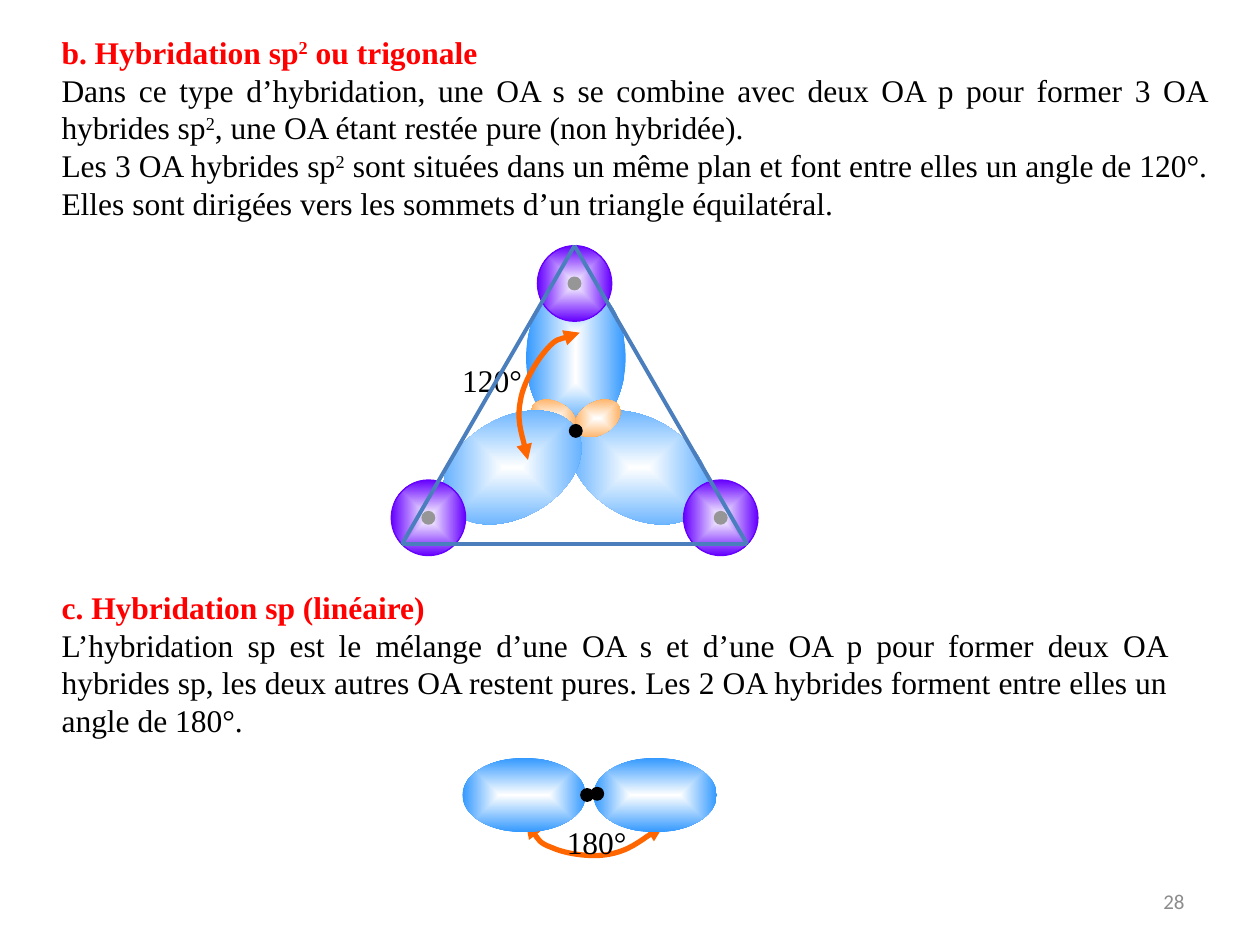
from math import cos, radians, sin

from pptx import Presentation
from pptx.dml.color import RGBColor
from pptx.enum.shapes import MSO_CONNECTOR, MSO_SHAPE
from pptx.enum.text import MSO_ANCHOR, PP_ALIGN
from pptx.oxml import parse_xml
from pptx.oxml.ns import nsdecls, qn
from pptx.util import Inches, Pt

BLACK = RGBColor(0x00, 0x00, 0x00)
WHITE = RGBColor(0xFF, 0xFF, 0xFF)
RED = RGBColor(0xFF, 0x00, 0x00)
GREY = RGBColor(0x96, 0x96, 0x96)
PAGE_GREY = RGBColor(0x8C, 0x8C, 0x8C)
LOBE_BLUE = RGBColor(0x33, 0x99, 0xFF)
TAIL_ORANGE = RGBColor(0xFF, 0x99, 0x33)
ATOM_VIOLET = RGBColor(0x66, 0x00, 0xFF)
ARC_ORANGE = RGBColor(0xFF, 0x66, 0x00)
TRIANGLE_BLUE = RGBColor(0x4B, 0x7E, 0xBC)
SERIF = "Times New Roman"

# Content: each paragraph is a tuple of spans, every second span is raised
TRIGONAL_TEXT = [
    ("b. Hybridation sp", "2", " ou trigonale"),
    ("Dans ce type d’hybridation, une OA s se combine avec deux OA p pour "
     "former 3 OA hybrides sp", "2", ", une OA étant restée pure (non hybridée)."),
    ("Les 3 OA hybrides sp", "2", " sont situées dans un même plan et font entre "
     "elles un angle de 120°. Elles sont dirigées vers les sommets d’un triangle "
     "équilatéral."),
]
LINEAR_TEXT = [
    ("c. Hybridation sp (linéaire)",),
    ("L’hybridation sp est le mélange d’une OA s et d’une OA p pour former deux "
     "OA hybrides sp, les deux autres OA restent pures. Les 2 OA hybrides forment "
     "entre elles un angle de 180°.",),
]

# Geometry in inches
NUCLEUS = (4.57, 3.42)
LOBE_ANGLES = (90, 210, 330)
LOBE_DISTANCE, TAIL_DISTANCE = 0.58, 0.2
LOBE_SIZE, TAIL_SIZE, DOT_SIZE = (1.18, 0.79), (0.39, 0.26), (0.1, 0.1)
ATOM_SIZE, LINEAR_LOBE_SIZE = (0.59, 0.6), (0.98, 0.59)
ATOM_CENTRES = [(3.4, 4.11), (5.72, 4.11), (4.56, 2.25)]
TRIANGLE = [(4.56, 1.95), (3.19, 4.32), (5.93, 4.32)]
LINEAR_PAIRS = [((4.16, 6.31), (4.66, 6.31)), ((5.2, 6.31), (4.74, 6.3))]
ARC_120 = [(4.6, 2.63), (4.56, 2.65), (4.42, 2.67), (4.34, 2.76), (4.26, 2.85),
           (4.15, 3.03), (4.13, 3.17), (4.1, 3.32), (4.17, 3.55), (4.19, 3.64)]
ARC_180 = [(4.17, 6.53), (4.2, 6.57), (4.27, 6.69), (4.38, 6.73), (4.49, 6.78),
           (4.7, 6.81), (4.84, 6.78), (4.99, 6.75), (5.17, 6.61), (5.26, 6.56)]

deck = Presentation()
deck.slide_width, deck.slide_height = Inches(10), Inches(7.5)
page = deck.slides.add_slide(deck.slide_layouts[6])


def add_text(place, paragraphs, heading=False, size=18, name=SERIF, color=BLACK,
             align=PP_ALIGN.LEFT, anchor=MSO_ANCHOR.TOP):
    box = page.shapes.add_textbox(*map(Inches, place))
    frame = box.text_frame
    frame.word_wrap = True
    frame.vertical_anchor = anchor
    for index, spans in enumerate(paragraphs):
        para = frame.add_paragraph() if index else frame.paragraphs[0]
        is_heading = heading and index == 0
        para.alignment = align
        para.font.name, para.font.size = name, Pt(size)
        para.font.bold = is_heading
        para.font.color.rgb = RED if is_heading else color
        for position, text in enumerate(spans):
            span = para.add_run()
            span.text = text
            if position % 2:
                span.font._element.set("baseline", "30000")


def add_ellipse(centre, size, color, glow=False, outline=False, rotation=0):
    left, top = (middle - length / 2 for middle, length in zip(centre, size))
    shape = page.shapes.add_shape(MSO_SHAPE.OVAL, *map(Inches, (left, top, *size)))
    shape.rotation = rotation
    shape.shadow.inherit = False
    if glow:
        # White centre fading out to the colour
        shape.fill.gradient()
        for stop, stop_color in zip(shape.fill.gradient_stops, (WHITE, color)):
            stop.color.rgb = stop_color
        gradient = shape._element.spPr.find(qn("a:gradFill"))
        gradient.replace(gradient.find(qn("a:lin")), parse_xml(
            f'<a:path {nsdecls("a")} path="shape"><a:fillToRect l="50000" '
            't="50000" r="50000" b="50000"/></a:path>'))
    else:
        shape.fill.solid()
        shape.fill.fore_color.rgb = color
    if outline:
        shape.line.color.rgb = color
        shape.line.width = Pt(0.75)
    else:
        shape.line.fill.background()


def turn(point, pivot, angle):
    cosine, sine = cos(radians(angle)), sin(radians(angle))
    across, down = point[0] - pivot[0], point[1] - pivot[1]
    return (pivot[0] + across * cosine - down * sine,
            pivot[1] + across * sine + down * cosine)


def add_arc(points, pivot, rotation):
    # The outline is laid out unturned, then the shape is rotated
    start, *rest = [tuple(map(Inches, turn(point, pivot, -rotation)))
                    for point in points]
    builder = page.shapes.build_freeform(*start)
    builder.add_line_segments(rest, close=False)
    arc = builder.convert_to_shape()
    arc.rotation = rotation
    arc.shadow.inherit = False
    arc.fill.background()
    arc.line.color.rgb = ARC_ORANGE
    arc.line.width = Pt(3)
    for end in ("headEnd", "tailEnd"):
        arc.line._get_or_add_ln().append(
            parse_xml(f'<a:{end} {nsdecls("a")} type="triangle"/>'))
    # Turn each three straight segments into one Bézier curve
    outline = next(arc._element.iter(qn("a:path")))
    segments = outline.findall(qn("a:lnTo"))
    for first in range(0, len(segments), 3):
        curve = parse_xml(f'<a:cubicBezTo {nsdecls("a")}/>')
        outline.append(curve)
        for segment in segments[first:first + 3]:
            curve.append(segment[0])
            outline.remove(segment)


def along_axis(angle, distance):
    return turn((NUCLEUS[0] + distance, NUCLEUS[1]), NUCLEUS, angle)


# Page number and trigonal text
add_text((7.17, 6.95, 2.33, 0.4), [("28",)], size=12, name="Calibri",
         color=PAGE_GREY, align=PP_ALIGN.RIGHT, anchor=MSO_ANCHOR.MIDDLE)
add_text((0.39, 0.2, 9.3, 1.62), TRIGONAL_TEXT, heading=True,
         align=PP_ALIGN.JUSTIFY, anchor=MSO_ANCHOR.MIDDLE)

# Three sp2 orbitals around the nucleus; the upright one's tail is covered
for angle in LOBE_ANGLES:
    add_ellipse(along_axis(angle, -LOBE_DISTANCE), LOBE_SIZE, LOBE_BLUE,
                glow=True, rotation=angle)
    if angle != 90:
        add_ellipse(along_axis(angle, TAIL_DISTANCE), TAIL_SIZE, TAIL_ORANGE,
                    glow=True, rotation=angle)
add_ellipse(NUCLEUS, DOT_SIZE, BLACK, outline=True)
add_arc(ARC_120, pivot=(4.35, 3.14), rotation=180)
for centre in ATOM_CENTRES:
    add_ellipse(centre, ATOM_SIZE, ATOM_VIOLET, glow=True, outline=True)
    add_ellipse(centre, DOT_SIZE, GREY, outline=True)
add_text((3.57, 2.82, 0.94, 0.4), [("120°",)])

# Equilateral triangle
for begin, end in zip(TRIANGLE, TRIANGLE[1:] + TRIANGLE[:1]):
    side = page.shapes.add_connector(MSO_CONNECTOR.STRAIGHT, *map(Inches, begin + end))
    side.line.color.rgb = TRIANGLE_BLUE
    side.line.width = Pt(2.25)
    side._element.spPr.append(parse_xml(f'<a:effectLst {nsdecls("a")}/>'))

# Linear text and its two sp orbitals
add_text((0.39, 4.61, 8.98, 1.31), LINEAR_TEXT, heading=True,
         align=PP_ALIGN.JUSTIFY, anchor=MSO_ANCHOR.MIDDLE)
add_arc(ARC_180, pivot=(4.73, 6.58), rotation=69.2)
add_text((4.4, 6.48, 0.94, 0.4), [("180°",)])
for lobe_centre, dot_centre in LINEAR_PAIRS:
    add_ellipse(lobe_centre, LINEAR_LOBE_SIZE, LOBE_BLUE, glow=True)
    add_ellipse(dot_centre, DOT_SIZE, BLACK, outline=True)

deck.save("out.pptx")
